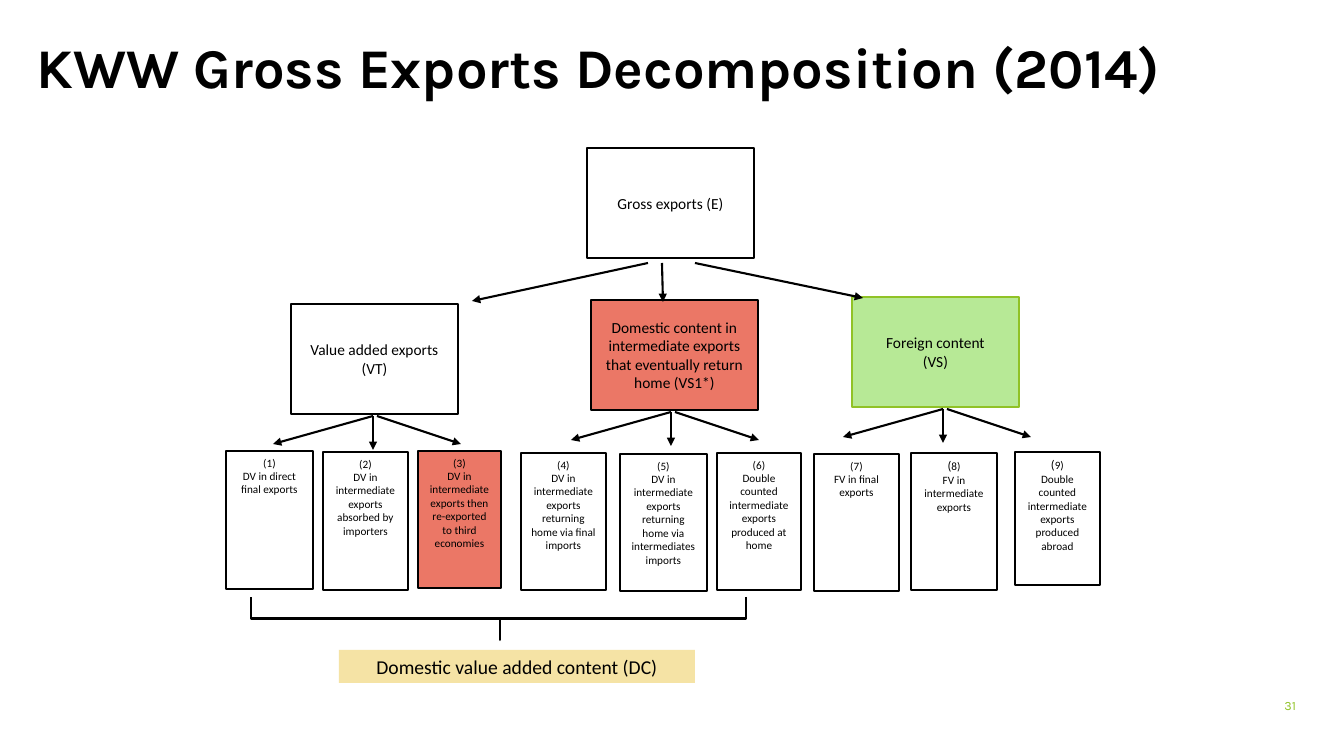
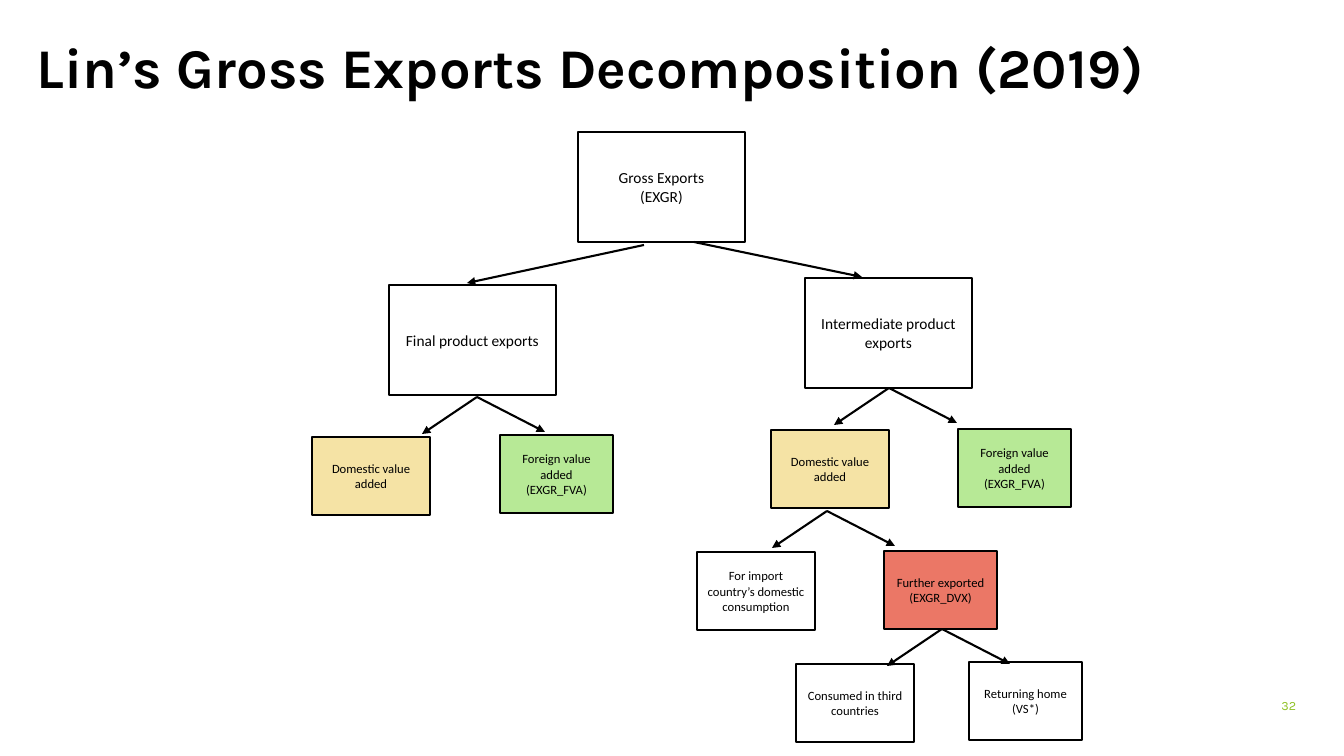
from lxml.etree import SubElement
from pptx import Presentation
from pptx.dml.color import RGBColor
from pptx.enum.shapes import MSO_CONNECTOR, MSO_SHAPE
from pptx.enum.text import MSO_ANCHOR, PP_ALIGN
from pptx.oxml.ns import qn
from pptx.util import Pt

SCALE = 914400 / 100.8
BLACK, WHITE, GREEN = "000000", "FFFFFF", "90C226"
RED, LIME, SAND = "EB7766", "B7E996", "F5E3A5"
TITLE = {"name": "Karla", "size": Pt(40), "bold": True}
FOOTER = {"name": "Karla", "size": Pt(9)}
BODY = {"name": "Calibri", "size": Pt(11)}
SMALL = {**BODY, "size": Pt(9)}
TINY = {**BODY, "size": Pt(8)}
BANNER = {**BODY, "size": Pt(14)}
NODE_W, NODE_H = 167, 110
LEFT_W, RIGHT_W, CHILD_H = 118, 113, 78

KWW_BRANCHES = [
    ((291, 304), 82, "Value added exports (VT)", WHITE, BLACK, [
        (-65, 147, 87, 138, "(1)\nDV in direct final exports", WHITE),
        (32, 148, 85, 138, "(2)\nDV in intermediate exports absorbed by importers", WHITE),
        (127, 147, 83, 137, "(3)\nDV in intermediate exports then re-exported to third economies", RED),
    ]),
    ((591, 300), 80, "Domestic content in intermediate exports that eventually return home (VS1*)", RED, BLACK, [
        (-70, 153, 85, 137, "(4)\nDV in intermediate exports returning home via final imports", WHITE),
        (29, 154, 87, 137, "(5)\nDV in intermediate exports returning home via intermediates imports", WHITE),
        (126, 153, 84, 137, "(6)\nDouble counted intermediate exports produced at home", WHITE),
    ]),
    ((852, 297), 91, "Foreign content\n(VS)", LIME, GREEN, [
        (-38, 157, 85, 137, "(7)\nFV in final exports", WHITE),
        (59, 156, 86, 137, "(8)\nFV in intermediate exports", WHITE),
        (163, 155, 85, 133, "(9)\nDouble counted intermediate exports produced abroad", WHITE),
    ]),
]
LIN_NODES = [((389, 285), "Final product exports"), ((805, 278), "Intermediate product exports")]
DOMESTIC = ("Domestic value added", SAND)
FOREIGN = ("Foreign value added\n(EXGR_FVA)", LIME)
LIN_PAIRS = [
    ((477, 397), (-165, 40), (23, 38), DOMESTIC, FOREIGN),
    ((889, 388), (-118, 42), (69, 41), DOMESTIC, FOREIGN),
    ((827, 511), (-130, 41), (57, 40),
     ("For import country’s domestic consumption", WHITE), ("Further exported\n(EXGR_DVX)", RED)),
    ((942, 629), (-146, 35), (27, 33),
     ("Consumed in third countries", None), ("Returning home\n(VS*)", None)),
]


def px(*lengths):
    """Turn pixel lengths into EMU."""
    return [round(length * SCALE) for length in lengths]


def paint(target, color):
    """Give a fill or a line a solid colour, or none."""
    if color:
        target.solid()
        target.fore_color.rgb = RGBColor.from_string(color)
    else:
        target.background()


def write(shape, text, font, color=BLACK, align=PP_ALIGN.CENTER, anchor=MSO_ANCHOR.MIDDLE):
    """Write one paragraph per line; brackets of labels (8) and (9) are larger."""
    frame = shape.text_frame
    frame.word_wrap = True
    frame.vertical_anchor = anchor
    for index, line in enumerate(text.split("\n")):
        paragraph = frame.paragraphs[0] if index == 0 else frame.add_paragraph()
        paragraph.alignment = align
        pieces = [("(", SMALL), (line[1:], font)] if line in ("(8)", "(9)") else [(line, font)]
        for words, values in pieces:
            run = paragraph.add_run()
            run.text = words
            for name, value in values.items():
                setattr(run.font, name, value)
            run.font.color.rgb = RGBColor.from_string(color)


def add_node(slide, box, text, font=BODY, fill=WHITE, outline=BLACK, anchor=MSO_ANCHOR.MIDDLE):
    """Draw a labelled rectangle."""
    node = slide.shapes.add_shape(MSO_SHAPE.RECTANGLE, *px(*box))
    node.shadow.inherit = False
    paint(node.fill, fill)
    paint(node.line.fill, outline)
    if outline:
        node.line.width = Pt(1)
    write(node, text, font, anchor=anchor)


def add_arrow(slide, start, end):
    """Draw a black arrow between two points."""
    arrow = slide.shapes.add_connector(MSO_CONNECTOR.STRAIGHT, *px(*start, *end))
    paint(arrow.line.fill, BLACK)
    arrow.line.width = Pt(1.5)
    SubElement(arrow.line._get_or_add_ln(), qn("a:tailEnd"), type="triangle")
    SubElement(arrow._element.spPr, qn("a:effectLst"))


def add_fan(slide, hub, rays):
    """Draw arrows whose starts and ends are offsets from a hub."""
    x, y = hub
    for start_dx, end_dx, end_dy in rays:
        add_arrow(slide, (x + start_dx, y), (x + end_dx, y + end_dy))


def add_brace(slide, box):
    """Draw a square brace that opens upward and fills the box."""
    left, top, width, height = box
    brace_left = left + (width - height) / 2
    brace_top = top + (height - width) / 2
    brace = slide.shapes.add_shape(MSO_SHAPE.RIGHT_BRACE, *px(brace_left, brace_top, height, width))
    brace.rotation = 90
    brace.adjustments[0], brace.adjustments[1] = 0, 0.497
    brace.shadow.inherit = False
    paint(brace.fill, None)
    paint(brace.line.fill, BLACK)
    brace.line.width = Pt(1.5)


def add_branch(slide, corner, hub_dx, text, fill, outline, leaves):
    """Draw a KWW component with its three numbered terms below."""
    left, top = corner
    add_node(slide, (left, top, NODE_W, NODE_H), text, BODY, fill, outline)
    for dx, dy, width, height, label, leaf_fill in leaves:
        add_node(slide, (left + dx, top + dy, width, height), label, TINY, leaf_fill,
                 anchor=MSO_ANCHOR.TOP)
    add_fan(slide, (left + hub_dx, top + NODE_H + 2), [(0, -100, 28), (0, 0, 34), (4, 88, 28)])


def add_pair(slide, hub, left_offset, right_offset, left_child, right_child):
    """Draw two child boxes around a hub and the arrows to them."""
    x, y = hub
    children = [(left_offset, LEFT_W, left_child), (right_offset, RIGHT_W, right_child)]
    for (dx, dy), width, (label, fill) in children:
        add_node(slide, (x + dx, y + dy, width, CHILD_H), label, SMALL, fill)
    add_fan(slide, hub, [(0, -55, 37), (0, 68, 35)])


def add_page(deck, heading, number):
    """Add a blank slide with its heading and page number."""
    slide = deck.slides.add_slide(deck.slide_layouts[6])
    title = slide.shapes.add_textbox(*px(27, 28, 1278, 99))
    write(title, heading, TITLE, align=PP_ALIGN.LEFT, anchor=MSO_ANCHOR.TOP)
    footer = slide.shapes.add_textbox(*px(1231, 686, 75, 40))
    write(footer, str(number), FOOTER, GREEN, PP_ALIGN.RIGHT)
    return slide


def build_kww(deck):
    """Build the KWW decomposition tree."""
    slide = add_page(deck, "KWW Gross Exports Decomposition (2014)", 31)
    add_node(slide, (587, 148, NODE_W, NODE_H), "Gross exports (E)")
    for branch in KWW_BRANCHES:
        add_branch(slide, *branch)
    add_fan(slide, (662, 263), [(0, 1, 39), (-14, -190, 38), (33, 201, 35)])
    add_node(slide, (339, 650, 356, 33), "Domestic value added content (DC)", BANNER, SAND, None)
    add_brace(slide, (251, 597, 495, 43))


def build_lin(deck):
    """Build the Lin decomposition tree."""
    slide = add_page(deck, "Lin’s Gross Exports Decomposition (2019)", 32)
    add_node(slide, (578, 132, NODE_W, NODE_H), "Gross Exports\n(EXGR)")
    for corner, label in LIN_NODES:
        add_node(slide, (*corner, NODE_W, NODE_H), label)
    add_arrow(slide, (644, 245), (467, 283))
    add_arrow(slide, (694, 242), (862, 277))
    for pair in LIN_PAIRS:
        add_pair(slide, *pair)


def main():
    """Build and save the deck."""
    deck = Presentation()
    deck.slide_width, deck.slide_height = px(1344, 756)
    build_kww(deck)
    build_lin(deck)
    deck.save("out.pptx")


if __name__ == "__main__":
    main()
